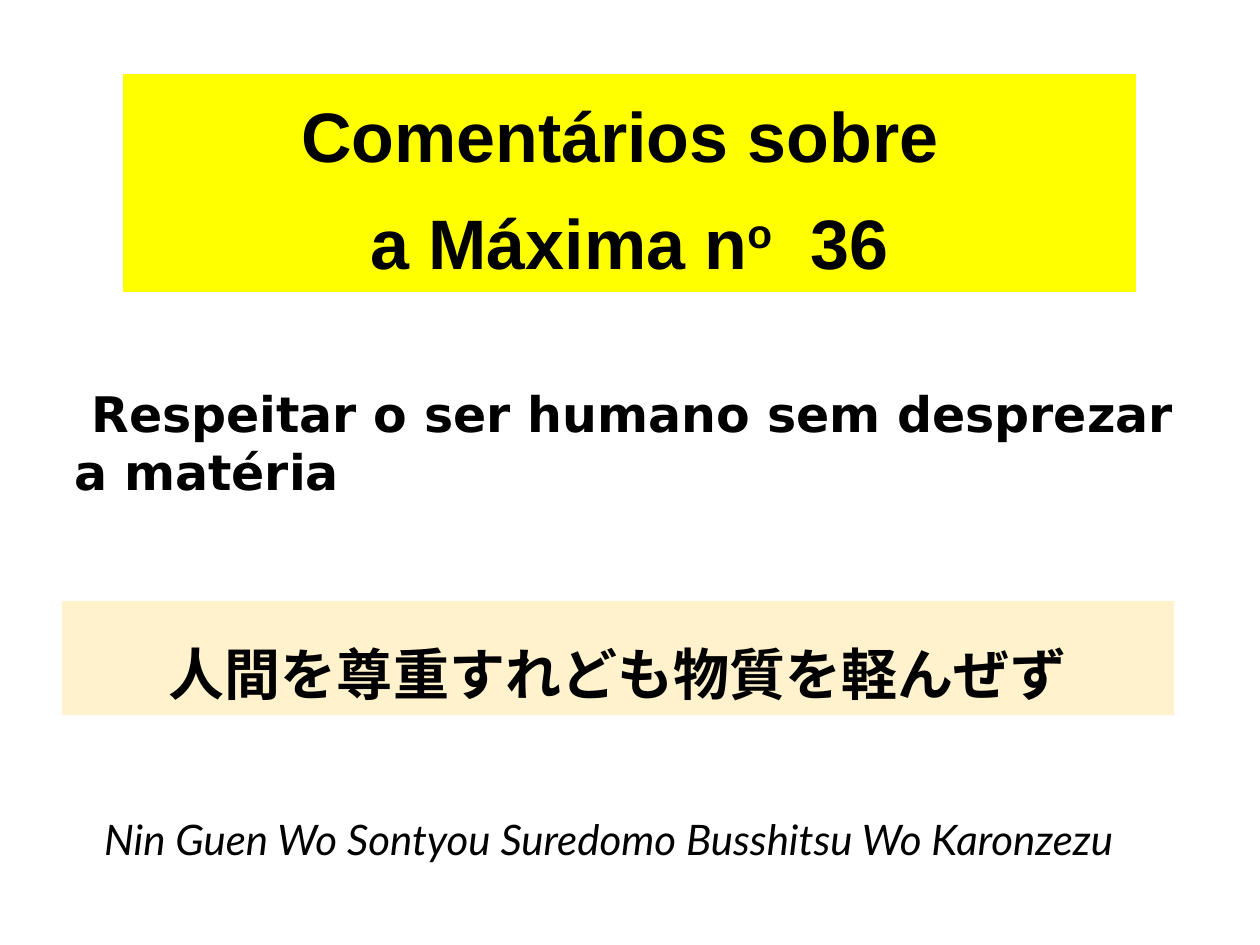
from pptx import Presentation
from pptx import util as u
from pptx.dml.color import RGBColor
from pptx.enum import shapes, text
from pptx.oxml.ns import qn

HUES = {"ink": "000000", "sun": "FFFF00", "cream": "FFF2CC"}
MID = text.PP_ALIGN.CENTER
LEFT = text.PP_ALIGN.LEFT


def px(n):
    return u.Emu(round(n * 914400 / 126))


class Deck:
    def __init__(self):
        self.prs = Presentation()
        self.prs.slide_width, self.prs.slide_height = px(1260), px(945)
        self.slide = self.prs.slides.add_slide(self.prs.slide_layouts[5])

    def paint(self, shape, hue):
        shape.fill.solid()
        shape.fill.fore_color.rgb = RGBColor.from_string(HUES[hue])
        shape.line.fill.background()

    def style(self, shape, face, size, align, bold=False, italic=False, top=6):
        frame = shape.text_frame
        frame.word_wrap = True
        frame.auto_size = text.MSO_AUTO_SIZE.NONE
        frame.vertical_anchor = text.MSO_ANCHOR.TOP
        frame.margin_top = px(top)
        for para in frame.paragraphs:
            para.alignment = align
            for run in para.runs:
                font = run.font
                font.name, font.size = face, u.Pt(size)
                font.bold, font.italic = bold, italic
                font.color.rgb = RGBColor.from_string(HUES["ink"])

    def title(self, box, lines, hue, face, size):
        shape = self.slide.shapes.title
        shape.left, shape.top, shape.width, shape.height = map(px, box)
        self.paint(shape, hue)
        frame = shape.text_frame
        for i, parts in enumerate(lines):
            para = frame.add_paragraph() if i else frame.paragraphs[0]
            para.line_spacing, para.space_after = 1.15, u.Pt(6)
            for words, lift in parts:
                run = para.add_run()
                run.text = words
                if lift:
                    run.font._element.set("baseline", str(lift * 1000))
        self.style(shape, face, size, MID, bold=True)

    def band(self, box, words, hue, face, size, top):
        kind = shapes.MSO_SHAPE.RECTANGLE
        shape = self.slide.shapes.add_shape(kind, *map(px, box))
        shape.shadow.inherit = False
        self.paint(shape, hue)
        shape.text_frame.text = words
        self.style(shape, face, size, MID, bold=True, top=top)
        for run in shape.text_frame.paragraphs[0].runs:
            east = run.font._element.makeelement(qn("a:ea"), {"typeface": face})
            run.font._element.find(qn("a:latin")).addnext(east)

    def label(self, box, words, face, size, align, **look):
        shape = self.slide.shapes.add_textbox(*map(px, box))
        shape.text_frame.text = words
        self.style(shape, face, size, align, **look)


def main():
    deck = Deck()
    lines = [
        [("Comentários sobre ", 0)],
        [("a Máxima n", 0), ("o", 30), ("  36", 0)],
    ]
    deck.title((123, 74, 1013, 218), lines, "sun", "Arial", 40)
    deck.band((62, 601, 1112, 114), "人間を尊重すれども物質を軽んぜず",
              "cream", "DejaVu Sans", 32, 39)
    deck.label((62, 377, 1157, 131),
               " Respeitar o ser humano sem desprezar a matéria",
               "DejaVu Sans", 28, LEFT, bold=True)
    deck.label((30, 808, 1157, 63),
               "Nin Guen Wo Sontyou Suredomo Busshitsu Wo Karonzezu",
               "Lato", 24, MID, italic=True)
    deck.prs.save("out.pptx")


if __name__ == "__main__":
    main()
